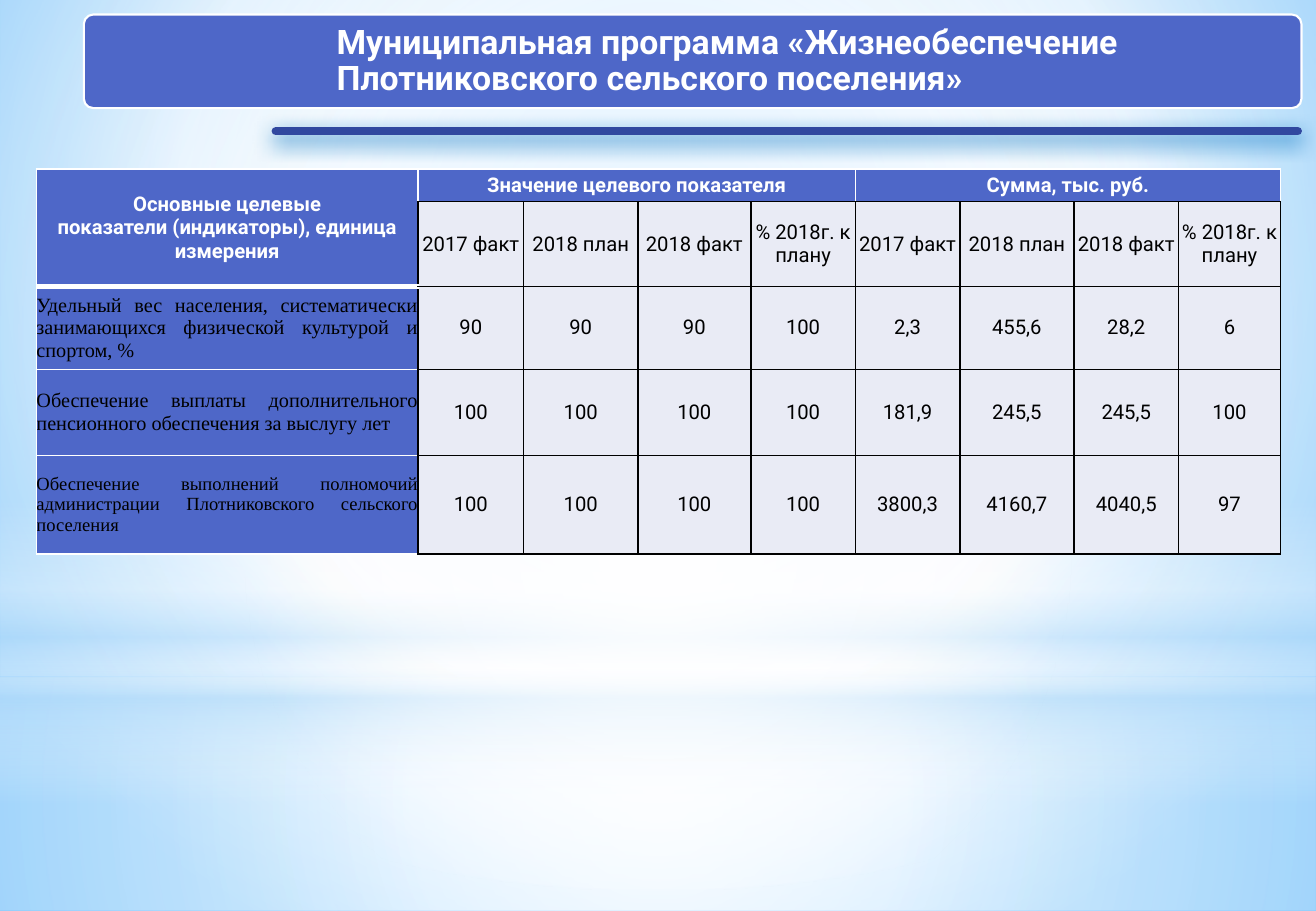
"""Build the slide on the municipal livelihood programme and its target indicators."""
from dataclasses import dataclass

from lxml import etree
from pptx import Presentation
from pptx.dml.color import RGBColor
from pptx.enum import shapes, text
from pptx.oxml.ns import nsdecls, qn
from pptx.util import Inches, Pt

TITLE = "Муниципальная программа «Жизнеобеспечение Плотниковского сельского поселения»"
INDICATOR_HEAD = "Основные целевые\nпоказатели (индикаторы), единица измерения"
GROUPS = ["Значение целевого показателя", "Сумма, тыс. руб."]
PERIODS = ["2017 факт", "2018 план", "2018 факт", "% 2018г. к плану"]
INDICATORS = [
    ("Удельный вес населения, систематически занимающихся физической культурой и спортом, %",
     ["90", "90", "90", "100", "2,3", "455,6", "28,2", "6"]),
    ("Обеспечение выплаты дополнительного пенсионного обеспечения за выслугу лет",
     ["100", "100", "100", "100", "181,9", "245,5", "245,5", "100"]),
    ("Обеспечение выполнений полномочий администрации Плотниковского сельского поселения",
     ["100", "100", "100", "100", "3800,3", "4160,7", "4040,5", "97"]),
]
COL_WIDTHS = [3.14, 0.87, 0.94, 0.93, 0.86, 0.86, 0.94, 0.86, 0.84]
ROW_HEIGHTS = [0.27, 0.7, 0.68, 0.71, 0.81]
WIDTH, HEIGHT = 10.83, 7.5
CENTRE = (50, 50, 50, 50)
BACKGROUND = ([(0, "9ED5FF", 100), (60, "FFFFFF", 100), (100, "5BB9FF", 100)], (20, 10, 20, 60))
RECT, OVAL = shapes.MSO_SHAPE.RECTANGLE, shapes.MSO_SHAPE.OVAL
GLOWS = [
    (RECT, 5.58, 1.92, [(0, "FFFFFF", 91), (37, "FFFFFF", 76), (100, "B4DCFA", 79)], CENTRE),
    (RECT, 0, 5.58, [(0, "FFFFFF", 89), (48, "FFFFFF", 62), (100, "B4DCFA", 79)], CENTRE),
    (RECT, 4.12, 2.5, [(0, "FFFFFF", 0), (29, "FFFFFF", 30), (45, "B4DCFA", 40),
                       (55, "FFFFFF", 26), (65, "B4DCFA", 60), (100, "FFFFFF", 0)], None),
    (OVAL, 1.75, 5.58, [(0, "FFFFFF", 100), (56, "FFFFFF", 0)], CENTRE),
]


@dataclass(frozen=True)
class Theme:
    """Colours, fonts and type sizes."""
    accent: str = "4E67C8"
    rule: str = "31489F"
    glow: str = "0070C0"
    pale: str = "E9EBF5"
    white: str = "FFFFFF"
    black: str = "000000"
    sans: str = "Roboto"
    serif: str = "Times New Roman"
    title: int = 20
    body: int = 12
    small: int = 11


T = Theme()


def rgb(value):
    """Return a colour object."""
    return RGBColor.from_string(value)


def style(tf, size, color, font, bold, align):
    """Format every run of a text frame."""
    for p in tf.paragraphs:
        p.alignment = align
        for r in p.runs:
            r.font.size, r.font.name, r.font.bold = Pt(size), font, bold
            r.font.color.rgb = rgb(color)


def set_gradient(fill, parent, stops, focus):
    """Give a fill a radial gradient, or a vertical one without a focus."""
    fill.solid()
    gs = "".join(f'<a:gs pos="{pos * 1000}"><a:srgbClr val="{color}">'
                 f'<a:alpha val="{alpha * 1000}"/></a:srgbClr></a:gs>' for pos, color, alpha in stops)
    shade = '<a:lin ang="5400000" scaled="0"/>'
    if focus:
        sides = " ".join(f'{side}="{v * 1000}"' for side, v in zip("ltrb", focus))
        shade = f'<a:path path="circle"><a:fillToRect {sides}/></a:path>'
    grad = etree.fromstring(f'<a:gradFill {nsdecls("a")} rotWithShape="1">'
                            f'<a:gsLst>{gs}</a:gsLst>{shade}</a:gradFill>')
    parent.replace(parent.find(qn("a:solidFill")), grad)


def add_box(slide, kind, x, y, w, h):
    """Add a preset shape without a shadow."""
    sp = slide.shapes.add_shape(kind, Inches(x), Inches(y), Inches(w), Inches(h))
    sp.shadow.inherit = False
    return sp


def add_backdrop(slide):
    """Draw the background and its soft glows."""
    fill = slide.background.fill
    fill.solid()
    set_gradient(fill, slide.element.find(".//" + qn("p:bgPr")), *BACKGROUND)
    for kind, y, h, stops, focus in GLOWS:
        sp = add_box(slide, kind, 0, y, WIDTH, h)
        sp.line.fill.background()
        set_gradient(sp.fill, sp.element.spPr, stops, focus)


def add_header(slide):
    """Draw the title banner and the rule beneath it."""
    banner = add_box(slide, shapes.MSO_SHAPE.ROUNDED_RECTANGLE, 0.69, 0.12, 10.02, 0.77)
    banner.adjustments[0] = 0.1
    banner.fill.solid()
    banner.fill.fore_color.rgb = rgb(T.accent)
    banner.line.color.rgb = rgb(T.white)
    banner.line.width = Pt(1.25)

    title = slide.shapes.title
    slide.shapes.element.append(title.element)
    title.left, title.top, title.width, title.height = map(Inches, (2.77, 0.12, 7.94, 0.77))
    tf = title.text_frame
    tf.text = TITLE
    tf.word_wrap, tf.auto_size = True, text.MSO_AUTO_SIZE.NONE
    tf.vertical_anchor = text.MSO_ANCHOR.MIDDLE
    tf.margin_left, tf.margin_right = 0, Inches(0.79)
    tf.margin_top = tf.margin_bottom = Inches(0.08)
    tf.paragraphs[0].line_spacing = 0.9
    style(tf, T.title, T.white, T.sans, True, text.PP_ALIGN.LEFT)

    rule = slide.shapes.add_connector(shapes.MSO_CONNECTOR.STRAIGHT, Inches(2.27), Inches(1.08),
                                      Inches(10.68), Inches(1.08))
    rule.line.color.rgb = rgb(T.rule)
    rule.line.width = Pt(5)
    spPr = rule.element.spPr
    spPr.find(qn("a:ln")).set("cap", "rnd")
    spPr.append(etree.fromstring(
        f'<a:effectLst {nsdecls("a")}><a:outerShdw blurRad="{Pt(12)}" dist="{Pt(4)}" dir="5400000" '
        f'rotWithShape="0"><a:srgbClr val="{T.glow}"/></a:outerShdw></a:effectLst>'))


def set_borders(cell, **sides):
    """Set cell borders, black and 1 pt unless a side says otherwise."""
    tcPr = cell._tc.get_or_add_tcPr()
    for i, side in enumerate("LRTB"):
        color, width = sides.get(side, (T.black, 1))
        tcPr.insert(i, etree.fromstring(
            f'<a:ln{side} {nsdecls("a")} w="{Pt(width)}"><a:solidFill>'
            f'<a:srgbClr val="{color}"/></a:solidFill></a:ln{side}>'))


def add_indicators(slide):
    """Draw the table of target indicators and sums."""
    rows, cols, span = len(ROW_HEIGHTS), len(COL_WIDTHS), len(PERIODS)
    frame = slide.shapes.add_table(rows, cols, Inches(0.3), Inches(1.39),
                                   Inches(sum(COL_WIDTHS)), Inches(sum(ROW_HEIGHTS)))
    table = frame.table
    table.first_row = table.horz_banding = False
    for col, w in zip(table.columns, COL_WIDTHS):
        col.width = Inches(w)
    for row, h in zip(table.rows, ROW_HEIGHTS):
        row.height = Inches(h)

    heads = [INDICATOR_HEAD] + [name for group in GROUPS for name in [group] + [""] * (span - 1)]
    grid = [heads, [""] + PERIODS * len(GROUPS)] + [[name] + values for name, values in INDICATORS]
    thin, thick = (T.white, 1), (T.white, 3)
    for i, line in enumerate(grid):
        for j, words in enumerate(line):
            cell = table.cell(i, j)
            is_head = i == 0 or (i == 1 and j == 0)
            is_name = j == 0 and not is_head
            if is_head:
                bottom = thick if j == 0 else (T.black, 1)
                set_borders(cell, L=thin, R=thin, T=thin, B=bottom)
            elif is_name:
                set_borders(cell, L=thin, T=thin, B=thin)
            else:
                set_borders(cell)
            cell.fill.solid()
            cell.fill.fore_color.rgb = rgb(T.accent if is_head or is_name else T.pale)
            cell.vertical_anchor = text.MSO_ANCHOR.MIDDLE
            cell.margin_left = cell.margin_right = cell.margin_top = cell.margin_bottom = 0
            cell.text_frame.text = words
            style(cell.text_frame, T.small if is_name and i == rows - 1 else T.body,
                  T.white if is_head else T.black, T.serif if is_name else T.sans, is_head,
                  text.PP_ALIGN.JUSTIFY if is_name else text.PP_ALIGN.CENTER)

    table.cell(0, 0).merge(table.cell(1, 0))
    for j in range(1, cols, span):
        table.cell(0, j).merge(table.cell(0, j + span - 1))


def main():
    """Assemble and save the slide."""
    prs = Presentation()
    prs.slide_width, prs.slide_height = Inches(WIDTH), Inches(HEIGHT)
    slide = prs.slides.add_slide(prs.slide_layouts[5])
    add_backdrop(slide)
    add_header(slide)
    add_indicators(slide)
    prs.save("out.pptx")


if __name__ == "__main__":
    main()
